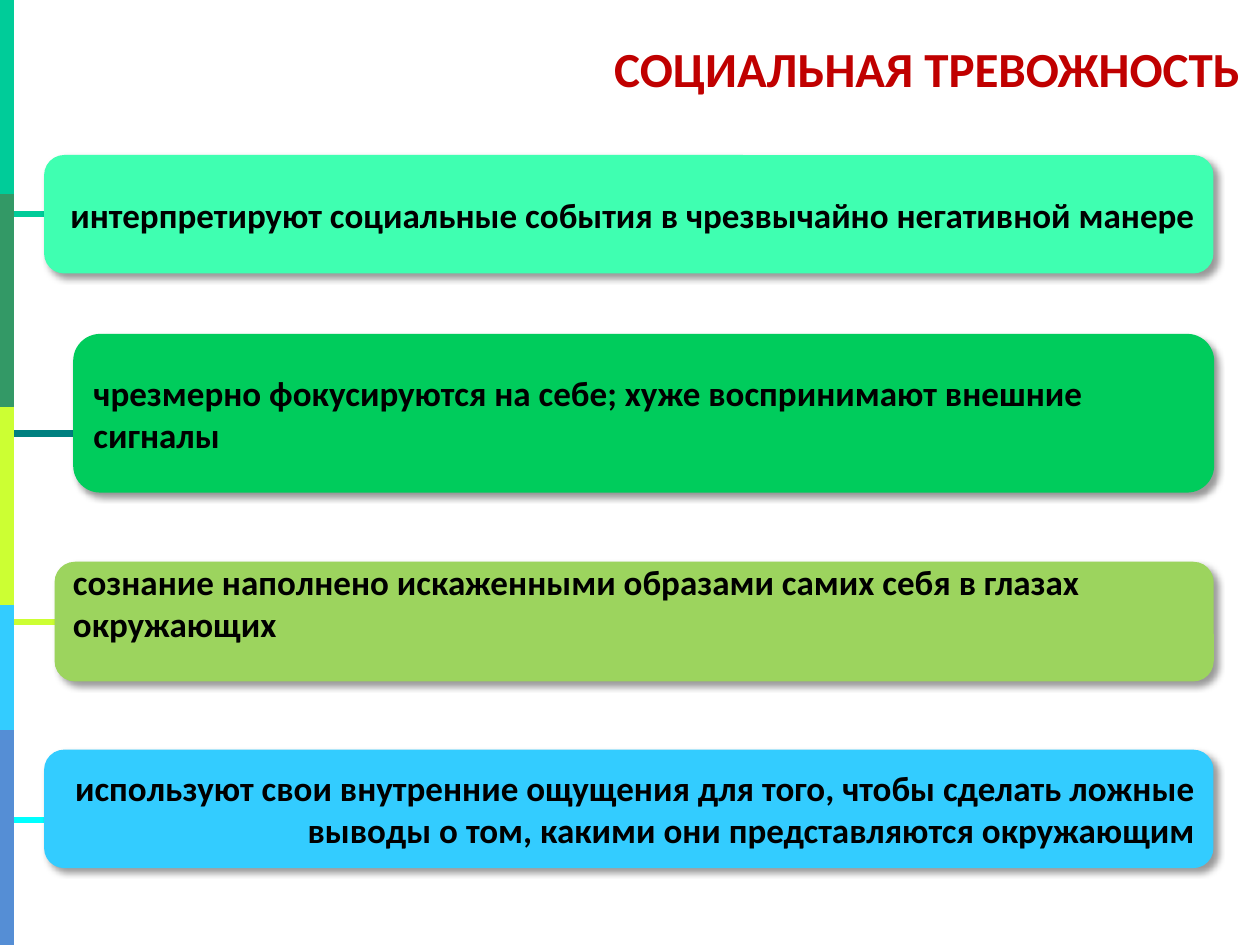
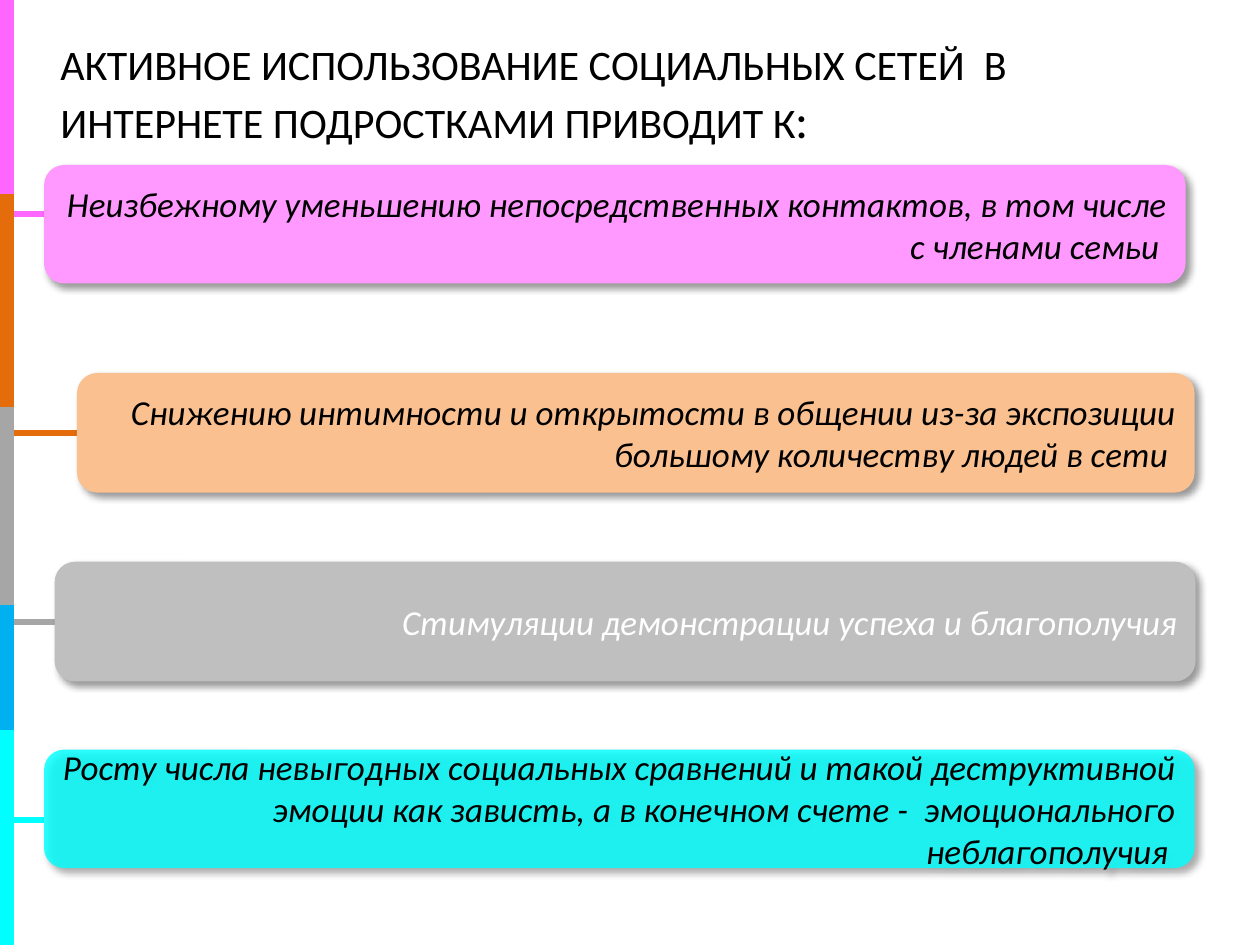
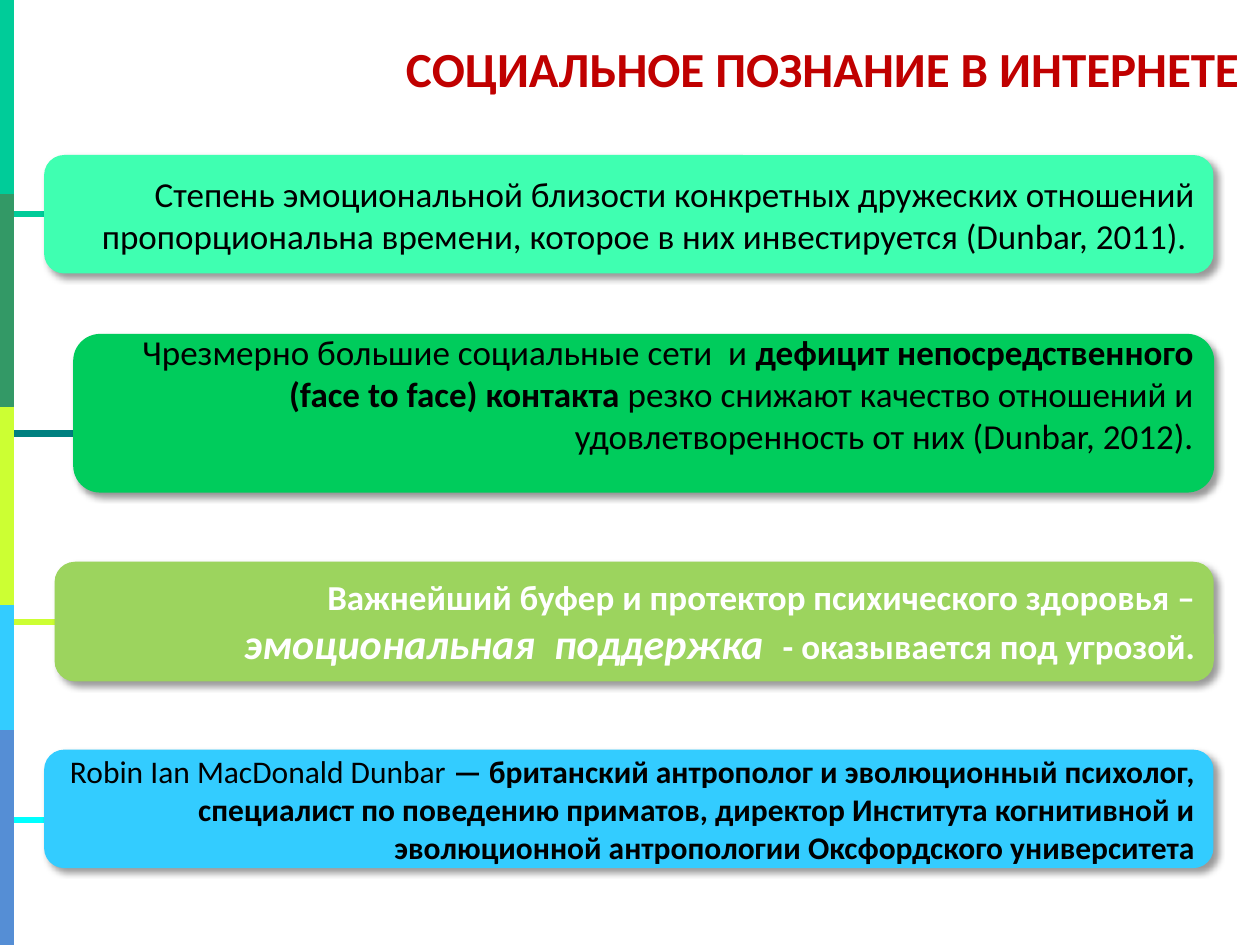
from dataclasses import dataclass

from lxml import etree
from pptx import Presentation
from pptx.dml.color import RGBColor as RGB
from pptx.enum.shapes import MSO_CONNECTOR as CONN, MSO_SHAPE as SHAPE
from pptx.enum.text import MSO_ANCHOR as ANCHOR, PP_ALIGN as ALIGN
from pptx.oxml.ns import qn
from pptx.util import Pt


@dataclass(frozen=True)
class Theme:
    font: str = "Calibri"
    black: str = "000000"
    white: str = "FFFFFF"
    title: str = "C00000"
    title_size: int = 28
    lead_size: int = 24
    body_size: int = 20
    note_size: int = 18
    stub_width: float = 3.5
    band_width: float = 10.25
    green_bands: tuple = ("00CC99", "339966", "CCFF33", "33CCFF", "558ED5")
    green_stubs: tuple = ("00CC99", "008080", "CCFF33", "00FFFF")
    green_boxes: tuple = ("3FFFB1", "00CC5C", "9CD45E", "33CCFF")
    pink_bands: tuple = ("FF66FF", "E46C0A", "A6A6A6", "00B0F0", "00FFFF")
    pink_stubs: tuple = ("FF66FF", "E46C0A", "A6A6A6", "00FFFF")
    pink_boxes: tuple = ("FF99FF", "FAC090", "BFBFBF", "00FFFF")


T = Theme()
LEFT, RIGHT, SPARE = ALIGN.LEFT, ALIGN.RIGHT, 22
BAND_X, BAND_LENGTH = 3, 122.8
BAND_TOPS = (0, 110.9, 232.4, 345.8, 417.2)
STUB_YS = (122.4, 247.7, 355.2, 468.7)
GREEN_GRID = ((25.2, 88.6, 668.2, 67.7), (41.8, 190.8, 652, 90.7),
              (31.2, 321, 662.4, 68.4), (25.2, 428.4, 668.2, 67.7))
PINK_GRID = ((25.2, 94.3, 652.3, 67.7), (44, 213.1, 638.7, 68.4),
             (31.2, 321, 652, 68.4), (25.2, 428.4, 657.4, 67.7))

slides = [
    {
        "title": ((343.4, 18.7, 372.2, 41), RIGHT, False,
                  [("СОЦИАЛЬНАЯ ТРЕВОЖНОСТЬ", T.title_size, T.title, "b")]),
        "bands": T.green_bands, "stubs": T.green_stubs,
        "boxes": T.green_boxes, "grid": GREEN_GRID, "opacity": 100,
        "texts": [
            (RIGHT, 0, [("интерпретируют социальные события в чрезвычайно негативной манере",
                         T.body_size, T.black, "b")]),
            (LEFT, 0, [("чрезмерно фокусируются на себе; хуже воспринимают внешние сигналы",
                        T.body_size, T.black, "b")]),
            (LEFT, SPARE, [("сознание наполнено искаженными образами самих себя в глазах окружающих",
                            T.body_size, T.black, "b")]),
            (RIGHT, 0, [("используют свои внутренние ощущения для того, чтобы сделать ложные "
                         "выводы о том, какими они представляются окружающим",
                         T.body_size, T.black, "b")]),
        ],
    },
    {
        "title": ((27.4, 18.7, 666.7, 69.8), LEFT, True,
                  [("АКТИВНОЕ ИСПОЛЬЗОВАНИЕ СОЦИАЛЬНЫХ СЕТЕЙ  В ИНТЕРНЕТЕ ПОДРОСТКАМИ ПРИВОДИТ К",
                    T.lead_size, T.black, ""),
                   (":", T.title_size, T.black, "")]),
        "bands": T.pink_bands, "stubs": T.pink_stubs,
        "boxes": T.pink_boxes, "grid": PINK_GRID, "opacity": 82,
        "texts": [
            (RIGHT, 0, [("Неизбежному уменьшению непосредственных контактов, в том числе "
                         "с членами семьи ", T.body_size, T.black, "i")]),
            (RIGHT, 0, [("Снижению интимности и открытости в общении из-за экспозиции "
                         "большому количеству людей в сети ", T.body_size, T.black, "i")]),
            (RIGHT, 0, [("Стимуляции демонстрации успеха и благополучия",
                         T.body_size, T.white, "i")]),
            (RIGHT, 0, [("Росту числа невыгодных социальных сравнений и такой деструктивной "
                         "эмоции как зависть, а в конечном счете -  эмоционального "
                         "неблагополучия ", T.body_size, T.black, "i")]),
        ],
    },
    {
        "title": ((224.6, 18.7, 490.4, 41), RIGHT, False,
                  [("СОЦИАЛЬНОЕ ПОЗНАНИЕ В ИНТЕРНЕТЕ", T.title_size, T.title, "b")]),
        "bands": T.green_bands, "stubs": T.green_stubs,
        "boxes": T.green_boxes, "grid": GREEN_GRID, "opacity": 100,
        "texts": [
            (RIGHT, 0, [("Степень эмоциональной близости конкретных дружеских отношений "
                         "пропорциональна времени, которое в них инвестируется (Dunbar, 2011). ",
                         T.body_size, T.black, "")]),
            (RIGHT, SPARE, [("Чрезмерно большие социальные сети  и ", T.body_size, T.black, ""),
                            ("дефицит непосредственного (face to face) контакта",
                             T.body_size, T.black, "b"),
                            (" резко снижают качество отношений и удовлетворенность от них "
                             "(Dunbar, 2012).", T.body_size, T.black, "")]),
            (RIGHT, 0, [("Важнейший буфер и протектор психического здоровья – ",
                         T.body_size, T.white, "b"),
                        ("эмоциональная  поддержка  ", T.lead_size, T.white, "bi"),
                        ("- оказывается под угрозой.", T.body_size, T.white, "b")]),
            (RIGHT, 0, [("Robin Ian MacDonald Dunbar ", T.note_size, T.black, ""),
                        ("— британский антрополог и эволюционный психолог, специалист по "
                         "поведению приматов, директор Института когнитивной и эволюционной "
                         "антропологии Оксфордского университета", T.note_size, T.black, "b")]),
        ],
    },
]


def write(sp, align, runs, wrap=True, spare=0):
    tf = sp.text_frame
    tf.word_wrap = wrap
    tf.margin_left = tf.margin_right = Pt(7.2)
    tf.margin_top = Pt(3.6)
    tf.margin_bottom = Pt(3.6 + spare)
    p = tf.paragraphs[0]
    p.alignment = align
    for text, size, color, style in runs:
        r = p.add_run()
        r.text = text
        r.font.name = T.font
        r.font.size = Pt(size)
        r.font.color.rgb = RGB.from_string(color)
        r.font.bold = "b" in style
        r.font.italic = "i" in style


def add_line(s, x1, y1, x2, y2, color, width):
    line = s.shapes.add_connector(CONN.STRAIGHT, Pt(x1), Pt(y1), Pt(x2), Pt(y2))
    line.line.color.rgb = RGB.from_string(color)
    line.line.width = Pt(width)
    etree.SubElement(line._element.spPr, qn("a:effectLst"))
    return line


prs = Presentation()
prs.slide_width, prs.slide_height = Pt(720), Pt(540)

for slide in slides:
    s = prs.slides.add_slide(prs.slide_layouts[6])
    place, align, wrap, runs = slide["title"]
    write(s.shapes.add_textbox(*map(Pt, place)), align, runs, wrap)

    for place, y, stub, fill, (align, spare, runs) in zip(
            slide["grid"], STUB_YS, slide["stubs"], slide["boxes"], slide["texts"]):
        left, top, width, height = place
        middle = top + height / 2
        joined = abs(middle - y) < 1
        line_y = middle if joined else y
        line = add_line(s, 0, line_y, left, line_y, stub, T.stub_width)

        sp = s.shapes.add_shape(SHAPE.ROUNDED_RECTANGLE, *map(Pt, place))
        sp.adjustments[0] = 0.17
        sp.fill.solid()
        sp.fill.fore_color.rgb = RGB.from_string(fill)
        sp.line.fill.background()
        sp.shadow.inherit = False
        effects = sp._element.spPr.find(qn("a:effectLst"))
        shadow = etree.SubElement(effects, qn("a:outerShdw"), blurRad=str(Pt(4)),
                                  dist=str(Pt(3)), dir="2700000", algn="tl", rotWithShape="0")
        tint = etree.SubElement(shadow, qn("a:srgbClr"), val=T.black)
        etree.SubElement(tint, qn("a:alpha"), val="40000")
        sp.text_frame.vertical_anchor = ANCHOR.MIDDLE
        write(sp, align, runs, spare=spare)
        if joined:
            line.end_connect(sp, 1)

    if slide["opacity"] < 100:
        tint = sp._element.spPr.find(qn("a:solidFill")).find(qn("a:srgbClr"))
        etree.SubElement(tint, qn("a:alpha"), val=str(slide["opacity"] * 1000))

    for top, color in zip(BAND_TOPS, slide["bands"]):
        add_line(s, BAND_X, top, BAND_X, top + BAND_LENGTH, color, T.band_width)

prs.save("out.pptx")
